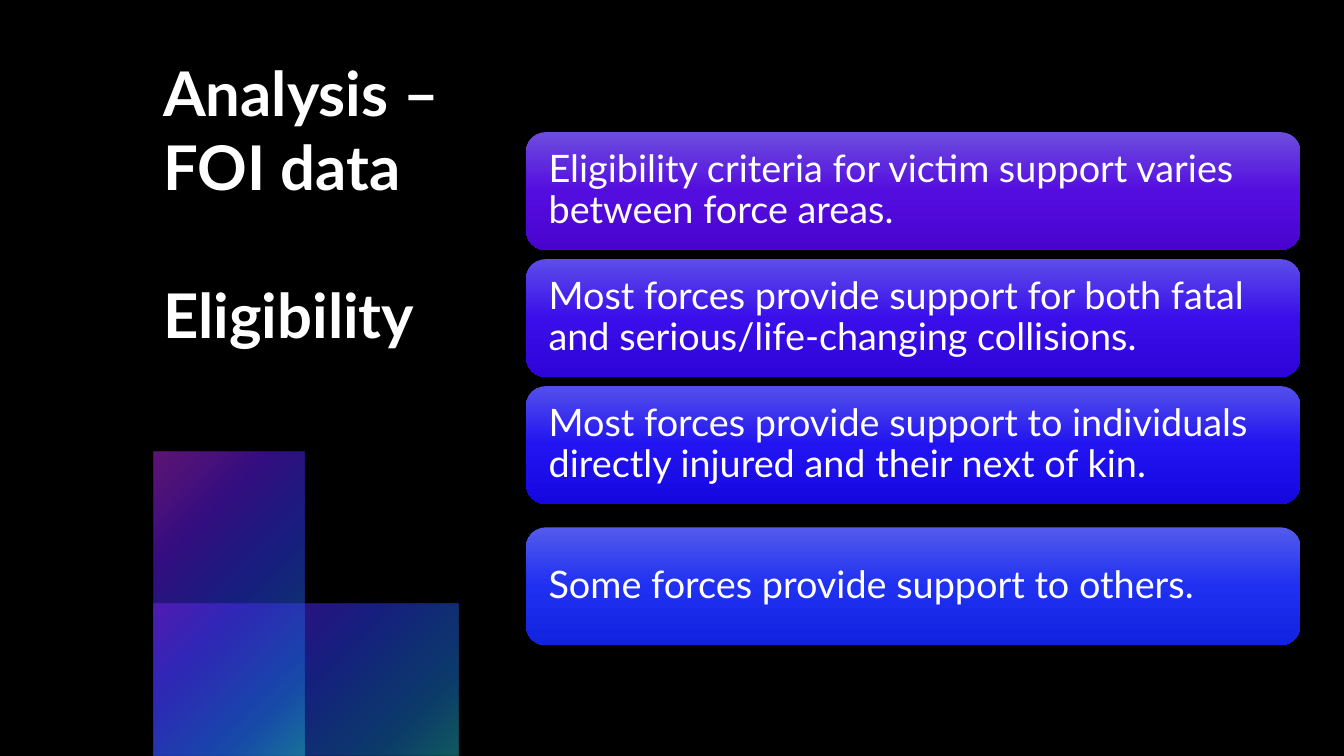
from dataclasses import dataclass

from lxml import etree
from pptx import Presentation
from pptx.dml.color import RGBColor
from pptx.enum.shapes import MSO_SHAPE
from pptx.enum.text import MSO_ANCHOR, PP_ALIGN
from pptx.oxml.ns import qn
from pptx.shapes.autoshape import Shape
from pptx.slide import Slide
from pptx.text.text import _Paragraph
from pptx.util import Pt

RECT, ROUND_RECT = MSO_SHAPE.RECTANGLE, MSO_SHAPE.ROUNDED_RECTANGLE
TOP, MIDDLE, LEFT = MSO_ANCHOR.TOP, MSO_ANCHOR.MIDDLE, PP_ALIGN.LEFT


@dataclass(frozen=True)
class Stop:
    position: int
    color: str
    alpha: int = 100


@dataclass(frozen=True)
class Theme:
    font: str = "Lato"
    title_size: int = 44
    card_size: int = 27
    background: str = "000000"
    text: str = "FFFFFF"
    block_stops: tuple[Stop, ...] = (
        Stop(0, "B829E7", 50),
        Stop(25, "5717D5", 60),
        Stop(50, "2938E7", 55),
        Stop(81, "1775D5", 50),
        Stop(99, "22B4C2", 50),
    )


@dataclass(frozen=True)
class Box:
    left: float
    top: float
    width: float
    height: float


@dataclass(frozen=True)
class Card:
    text: str
    colors: tuple[str, str, str]
    extra_gap: float = 0


THEME = Theme()
SLIDE_W, SLIDE_H = 960, 540
TITLE_BOX = Box(109.4, 36, 250.6, 267)
TITLE_LINES = ("Analysis – FOI data", "Eligibility")
BLOCKS = (Box(109.4, 431.1, 218.2, 108.9), Box(109.4, 322.5, 108.2, 217.5))
FIRST_CARD = Box(375.8, 94.4, 553, 84.2)
CARD_PITCH = 90.7
CARD_INSET = 12
CARDS = (
    Card("Eligibility criteria for victim support varies between force areas.",
         ("6D4DDE", "540DDF", "4804CE")),
    Card("Most forces provide support for both fatal and serious/life-changing collisions.",
         ("5D4DE9", "3A0EEA", "2E04D8")),
    Card("Most forces provide support to individuals directly injured and their next of kin.",
         ("534FEB", "2114F0", "1407E0")),
    Card("Some forces provide support to others.",
         ("535AEC", "1F30F1", "1122E0"), extra_gap=10.2),
)


def set_gradient(s: Shape, stops: tuple[Stop, ...], circular: bool) -> None:
    """Fill with a gradient, either from the top left corner or downwards."""
    grad = etree.Element(qn("a:gradFill"), rotWithShape="1")
    stop_list = etree.SubElement(grad, qn("a:gsLst"))
    for stop in stops:
        gs = etree.SubElement(stop_list, qn("a:gs"), pos=str(stop.position * 1000))
        color = etree.SubElement(gs, qn("a:srgbClr"), val=stop.color)
        if stop.alpha < 100:
            etree.SubElement(color, qn("a:alpha"), val=str(stop.alpha * 1000))
    if circular:
        focus = etree.SubElement(grad, qn("a:path"), path="circle")
        etree.SubElement(focus, qn("a:fillToRect"), r="100000", b="100000")
    else:
        etree.SubElement(grad, qn("a:lin"), ang="5400000", scaled="0")
    s.fill.background()
    sp_pr = s._element.spPr
    sp_pr.replace(sp_pr.find(qn("a:noFill")), grad)


def add_gradient_shape(slide: Slide, kind: MSO_SHAPE, box: Box,
                       stops: tuple[Stop, ...], circular: bool = False) -> Shape:
    s = slide.shapes.add_shape(kind, Pt(box.left), Pt(box.top), Pt(box.width), Pt(box.height))
    s.shadow.inherit = False
    s.line.fill.background()
    set_gradient(s, stops, circular)
    return s


def add_run(p: _Paragraph, text: str, size: int, bold: bool = False) -> None:
    p.alignment = LEFT
    r = p.add_run()
    r.text = text
    r.font.name = THEME.font
    r.font.size = Pt(size)
    r.font.bold = bold
    r.font.color.rgb = RGBColor.from_string(THEME.text)


def add_title(slide: Slide, box: Box, lines: tuple[str, ...]) -> None:
    tb = slide.shapes.add_textbox(Pt(box.left), Pt(box.top), Pt(box.width), Pt(box.height))
    tf = tb.text_frame
    tf.word_wrap = True
    tf.vertical_anchor = TOP
    for i, line in enumerate(lines):
        p = tf.add_paragraph() if i else tf.paragraphs[0]
        if i:
            p.space_before = Pt(THEME.title_size * 1.2)
        add_run(p, line, THEME.title_size, bold=True)


def add_card(slide: Slide, box: Box, card: Card) -> None:
    stops = tuple(Stop(i * 50, color) for i, color in enumerate(card.colors))
    tf = add_gradient_shape(slide, ROUND_RECT, box, stops).text_frame
    tf.word_wrap = True
    tf.vertical_anchor = MIDDLE
    tf.margin_left = tf.margin_right = Pt(CARD_INSET)
    tf.margin_top = tf.margin_bottom = Pt(CARD_INSET)
    p = tf.paragraphs[0]
    p.line_spacing = 0.9
    add_run(p, card.text, THEME.card_size)


def main() -> None:
    prs = Presentation()
    prs.slide_width, prs.slide_height = Pt(SLIDE_W), Pt(SLIDE_H)
    slide = prs.slides.add_slide(prs.slide_layouts[6])

    # Background
    fill = slide.background.fill
    fill.solid()
    fill.fore_color.rgb = RGBColor.from_string(THEME.background)

    # Overlapping blocks in the lower left
    for block in BLOCKS:
        add_gradient_shape(slide, RECT, block, THEME.block_stops, circular=True)

    # Title
    add_title(slide, TITLE_BOX, TITLE_LINES)

    # Column of finding cards
    for i, card in enumerate(CARDS):
        top = FIRST_CARD.top + i * CARD_PITCH + card.extra_gap
        add_card(slide, Box(FIRST_CARD.left, top, FIRST_CARD.width, FIRST_CARD.height), card)

    prs.save("out.pptx")


if __name__ == "__main__":
    main()
